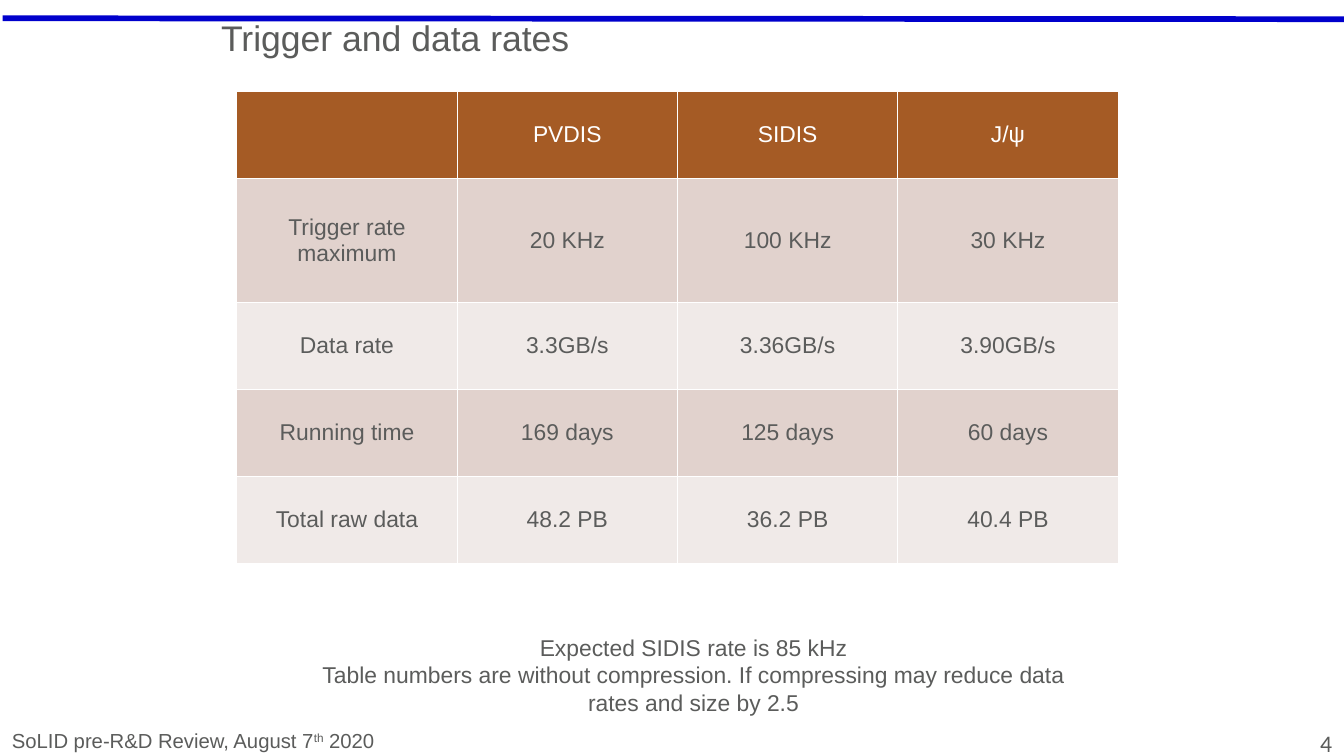
from lxml import etree
from pptx import Presentation
from pptx.dml.color import RGBColor
from pptx.enum.shapes import MSO_CONNECTOR
from pptx.enum.text import MSO_ANCHOR, PP_ALIGN
from pptx.oxml.ns import qn
from pptx.util import Inches, Pt

LEFT, CENTER, RIGHT = PP_ALIGN.LEFT, PP_ALIGN.CENTER, PP_ALIGN.RIGHT
TOP, MIDDLE = MSO_ANCHOR.TOP, MSO_ANCHOR.MIDDLE
STRAIGHT = MSO_CONNECTOR.STRAIGHT

GREY, WHITE, BLUE = "5B5C5B", "FFFFFF", "0000CC"
HEADER_FILL, BAND_FILLS = "A55B25", ("E1D2CD", "F0EAE8")

RATES = [
    ["", "PVDIS", "SIDIS", "J/ψ"],
    ["Trigger rate maximum", "20 KHz", "100 KHz", "30 KHz"],
    ["Data rate", "3.3GB/s", "3.36GB/s", "3.90GB/s"],
    ["Running time", "169 days", "125 days", "60 days"],
    ["Total raw data", "48.2 PB", "36.2 PB", "40.4 PB"],
]
COLUMN_WIDTH = 2.41
ROW_HEIGHTS = [0.95, 1.36, 0.95, 0.95, 0.95]


def rgb(color):
    return RGBColor.from_string(color)


def style_font(font, size, color=GREY, name="Arial"):
    font.size = Pt(size)
    font.name = name
    font.color.rgb = rgb(color)


def add_text(page, place, lines, size, align=LEFT, anchor=TOP,
             name="Arial", insets=(0.1, 0.05)):
    """Each line is a list of runs and becomes one paragraph."""
    box = page.shapes.add_textbox(*map(Inches, place))
    frame = box.text_frame
    frame.word_wrap = True
    frame.vertical_anchor = anchor
    frame.margin_left = frame.margin_right = Inches(insets[0])
    frame.margin_top = frame.margin_bottom = Inches(insets[1])
    for index, words in enumerate(lines):
        para = frame.add_paragraph() if index else frame.paragraphs[0]
        para.alignment = align
        for word in words:
            span = para.add_run()
            span.text = word
            style_font(span.font, size, name=name)
    return box


def add_rule(page, start, end, color, width):
    rule = page.shapes.add_connector(STRAIGHT, *map(Inches, start + end))
    rule.line.color.rgb = rgb(color)
    rule.line.width = Pt(width)
    etree.SubElement(rule._element.spPr, qn("a:effectLst"))


def add_borders(cell, color, width):
    properties = cell._tc.get_or_add_tcPr()
    for position, side in enumerate(("a:lnL", "a:lnR", "a:lnT", "a:lnB")):
        border = etree.Element(qn(side), w=str(Pt(width)))
        fill = etree.SubElement(border, qn("a:solidFill"))
        etree.SubElement(fill, qn("a:srgbClr"), val=color)
        properties.insert(position, border)


def add_rate_table(page, left, top):
    columns = len(RATES[0])
    frame = page.shapes.add_table(
        len(RATES), columns, Inches(left), Inches(top),
        Inches(COLUMN_WIDTH * columns), Inches(sum(ROW_HEIGHTS)))
    table = frame.table
    for column in table.columns:
        column.width = Inches(COLUMN_WIDTH)
    for number, values in enumerate(RATES):
        table.rows[number].height = Inches(ROW_HEIGHTS[number])
        fill = BAND_FILLS[(number - 1) % 2] if number else HEADER_FILL
        for column, value in enumerate(values):
            cell = table.cell(number, column)
            cell.fill.solid()
            cell.fill.fore_color.rgb = rgb(fill)
            cell.vertical_anchor = MIDDLE
            add_borders(cell, WHITE, 1)
            cell.text_frame.text = value
            para = cell.text_frame.paragraphs[0]
            para.alignment = CENTER
            for span in para.runs:
                style_font(span.font, 18, GREY if number else WHITE)
                span.font.bold = False


def main():
    deck = Presentation()
    deck.slide_width, deck.slide_height = Inches(14.7), Inches(8.27)
    page = deck.slides.add_slide(deck.slide_layouts[6])

    # Footer, top rule and page number
    footer = add_text(page, (0, 7.9, 5.71, 0.4),
                      [["SoLID pre-R&D Review, August 7", "th", " 2020"]],
                      16, anchor=MIDDLE, insets=(0.13, 0.07))
    ordinal = footer.text_frame.paragraphs[0].runs[1]
    ordinal.font._element.set("baseline", "30000")
    add_rule(page, (0.03, 0.2), (14.7, 0.21), BLUE, 4.5)
    add_text(page, (12.97, 7.9, 1.73, 0.47), [["4"]], 18.7, RIGHT,
             name="Calibri", insets=(0.13, 0.07))

    # Title
    title = add_text(page, (2.32, -0.25, 9.92, 1.38),
                     [["Trigger and data rates"]], 28, anchor=MIDDLE)
    title.text_frame.paragraphs[0].line_spacing = 0.9

    # Rates and the remarks below them
    add_rate_table(page, 2.59, 1)
    add_text(page, (3.4, 6.88, 8.37, 1.01),
             [["Expected SIDIS rate is 85 kHz"],
              ["Table numbers are without compression. If compressing "
               "may reduce data rates and size by 2.5"]], 18, CENTER)

    deck.save("out.pptx")


if __name__ == "__main__":
    main()
